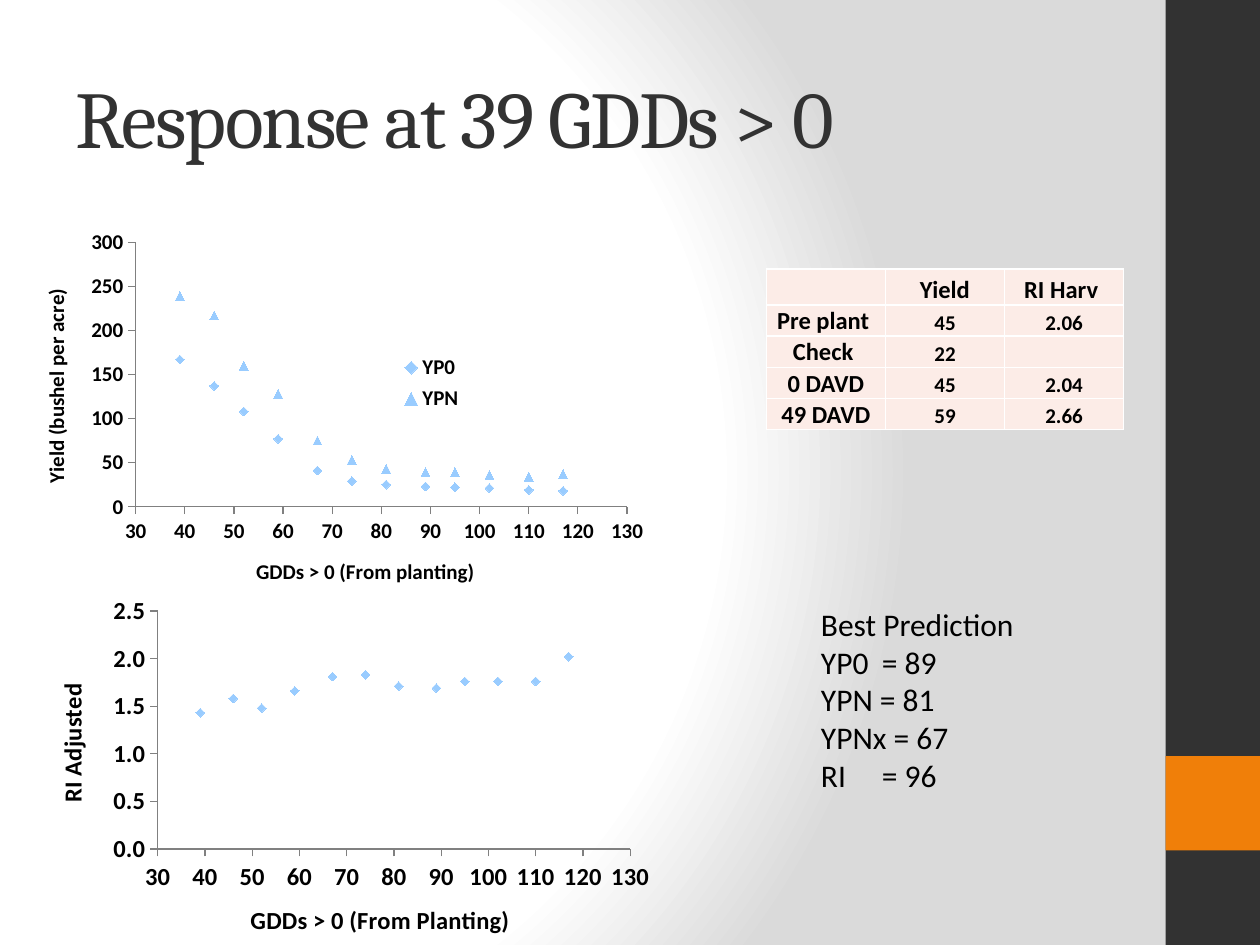
from lxml import etree
from pptx import Presentation
from pptx.chart.data import XyChartData
from pptx.dml.color import RGBColor
from pptx.enum.chart import XL_CHART_TYPE, XL_LEGEND_POSITION, XL_MARKER_STYLE, XL_TICK_MARK
from pptx.enum.shapes import MSO_SHAPE
from pptx.enum.text import MSO_ANCHOR, PP_ALIGN
from pptx.oxml import parse_xml
from pptx.oxml.ns import nsdecls, qn
from pptx.util import Cm, Pt

SCATTER = XL_CHART_TYPE.XY_SCATTER
LEGEND_RIGHT = XL_LEGEND_POSITION.RIGHT
DIAMOND, TRIANGLE = XL_MARKER_STYLE.DIAMOND, XL_MARKER_STYLE.TRIANGLE
TICK_OUT = XL_TICK_MARK.OUTSIDE
RECTANGLE = MSO_SHAPE.RECTANGLE
MIDDLE, BOTTOM = MSO_ANCHOR.MIDDLE, MSO_ANCHOR.BOTTOM
CENTER = PP_ALIGN.CENTER

BLACK = RGBColor(0x00, 0x00, 0x00)
WHITE = RGBColor(0xFF, 0xFF, 0xFF)
SILVER = RGBColor(0xDA, 0xDA, 0xDA)
CHARCOAL = RGBColor(0x32, 0x32, 0x32)
ORANGE = RGBColor(0xF0, 0x7F, 0x09)
PINK = RGBColor(0xFC, 0xEC, 0xE7)
SKY = RGBColor(0x99, 0xCC, 0xFF)
GRAY = RGBColor(0x80, 0x80, 0x80)

GDDS = [39, 46, 52, 59, 67, 74, 81, 89, 95, 102, 110, 117]
YIELDS = {
    "YP0": [167, 137, 108, 77, 41, 29, 25, 23, 22, 21, 19, 18],
    "YPN": [239, 217, 160, 128, 75, 53, 43, 39, 39, 36, 34, 37],
}
RI_ADJUSTED = {
    "Series 1": [1.43, 1.58, 1.48, 1.66, 1.81, 1.83, 1.71, 1.69, 1.76, 1.76, 1.76, 2.02],
}
HARVEST = [
    ["", "Yield", "RI Harv "],
    ["Pre plant ", "45", "2.06"],
    ["Check ", "22", ""],
    ["0 DAVD", "45", "2.04"],
    ["49 DAVD", "59", "2.66"],
]
PREDICTIONS = ["Best Prediction", "YP0\t= 89", "YPN = 81", "YPNx = 67", "RI\t= 96"]


def add_run(p, text, size, color=BLACK, font="Calibri", bold=False):
    """Add one formatted run to a paragraph."""
    r = p.add_run()
    r.text = text
    r.font.size, r.font.name, r.font.bold = Pt(size), font, bold
    r.font.color.rgb = color
    return r


def add_background(slide):
    """Fill the slide with a circular gradient."""
    fill = slide.background.fill
    fill.solid()
    fill.fore_color.rgb = WHITE
    stops = "".join(
        f'<a:gs pos="{pos * 1000}"><a:srgbClr val="{color}"/></a:gs>'
        for pos, color in ((0, WHITE), (75, WHITE), (100, SILVER))
    )
    solid = next(slide.background._cSld.iter(qn("a:solidFill")))
    solid.getparent().replace(solid, parse_xml(
        f'<a:gradFill {nsdecls("a")} rotWithShape="1"><a:gsLst>{stops}</a:gsLst>'
        '<a:path path="circle"><a:fillToRect l="20000" t="50000" r="100000" b="50000"/>'
        '</a:path></a:gradFill>'))


def add_sidebar(slide, x, y, w, h):
    """Draw the dark band with its orange block."""
    for top, height, color in ((y, h, CHARCOAL), (y + h * 0.8, h * 0.1, ORANGE)):
        sp = slide.shapes.add_shape(RECTANGLE, Cm(x), Cm(top), Cm(w), Cm(height))
        sp.shadow.inherit = False
        sp.fill.solid()
        sp.fill.fore_color.rgb = color
        sp.line.fill.background()


def add_title(slide, x, y, w, h):
    """Write the slide heading."""
    tf = slide.shapes.add_textbox(Cm(x), Cm(y), Cm(w), Cm(h)).text_frame
    tf.word_wrap = True
    tf.vertical_anchor = MIDDLE
    r = add_run(tf.paragraphs[0], "Response at 39 GDDs > 0", 46, CHARCOAL, "Cambria")
    r.font._element.set("spc", "-100")


def add_harvest_table(slide, x, y, w, h):
    """Tabulate yield and response index by treatment."""
    rows, cols = len(HARVEST), len(HARVEST[0])
    table = slide.shapes.add_table(rows, cols, Cm(x), Cm(y), Cm(w), Cm(h)).table
    head = 0.73
    for i, row in enumerate(HARVEST):
        table.rows[i].height = Cm((h - head) / (rows - 1) if i else head)
        for j, text in enumerate(row):
            cell = table.cell(i, j)
            cell.margin_left = cell.margin_right = cell.margin_top = Cm(0.03)
            cell.margin_bottom = 0
            cell.vertical_anchor = BOTTOM
            p = cell.text_frame.paragraphs[0]
            p.alignment = CENTER
            if text:
                add_run(p, text, 12 if i and j else 14, bold=True)
            else:
                etree.SubElement(p._p, qn("a:endParaRPr")).set("sz", "1200")
            for side in ("lnL", "lnR", "lnT", "lnB"):
                cell._tc.get_or_add_tcPr().append(parse_xml(
                    f'<a:{side} {nsdecls("a")} w="12700"><a:solidFill>'
                    f'<a:srgbClr val="{WHITE}"/></a:solidFill></a:{side}>'))
            cell.fill.solid()
            cell.fill.fore_color.rgb = PINK


def set_layout(element, after, x, y, w=None, h=None):
    """Place a chart part by fractions of the chart box."""
    for old in element.findall(qn("c:layout")):
        element.remove(old)
    layout = parse_xml(f'<c:layout {nsdecls("c")}><c:manualLayout/></c:layout>')
    inner = [("layoutTarget", "inner")] if after is None else []
    modes = [("xMode", "edge"), ("yMode", "edge")]
    sizes = [("x", x), ("y", y)] + ([("w", w), ("h", h)] if w else [])
    for tag, value in inner + modes + sizes:
        etree.SubElement(layout[0], qn(f"c:{tag}")).set("val", str(value))
    index = 0 if after is None else element.index(element.find(qn(after))) + 1
    element.insert(index, layout)


def format_axis(axis, title, size, low, high, step, place):
    """Set an axis scale, its line and its title."""
    axis.minimum_scale, axis.maximum_scale, axis.major_unit = low, high, step
    axis.has_major_gridlines = False
    axis.major_tick_mark = TICK_OUT
    axis.format.line.color.rgb = GRAY
    axis.tick_labels.number_format = "0.0" if step < 1 else "0"
    axis.tick_labels.number_format_is_linked = False
    add_run(axis.axis_title.text_frame.paragraphs[0], title, size, bold=True)
    set_layout(axis.axis_title._element, "c:tx", *place)


def add_scatter(slide, x, y, w, h, series, size, x_axis, y_axis, plot, legend=None):
    """Plot series against growing degree days."""
    data = XyChartData()
    for name, values in series.items():
        points = data.add_series(name)
        for gdd, value in zip(GDDS, values):
            points.add_data_point(gdd, value)
    chart = slide.shapes.add_chart(SCATTER, Cm(x), Cm(y), Cm(w), Cm(h), data).chart
    chart.has_title = False
    chart.font.size, chart.font.name, chart.font.bold = Pt(size), "Calibri", True
    chart.font.color.rgb = BLACK
    chart.plots[0].vary_by_categories = False
    for s, style in zip(chart.plots[0].series, (DIAMOND, TRIANGLE)):
        s.smooth = False
        s.format.line.fill.background()
        s.marker.style, s.marker.size = style, 5
        s.marker.format.fill.solid()
        s.marker.format.fill.fore_color.rgb = SKY
        s.marker.format.line.fill.background()
    title, place = x_axis
    format_axis(chart.category_axis, title, size, 30, 130, 10, place)
    title, high, step, place = y_axis
    format_axis(chart.value_axis, title, size, 0, high, step, place)
    set_layout(chart._chartSpace.chart.plotArea, None, *plot)
    chart.has_legend = legend is not None
    if legend:
        chart.legend.position = LEGEND_RIGHT
        chart.legend.include_in_layout = False
        set_layout(chart.legend._element, "c:legendPos", *legend)


def add_predictions(slide, x, y, w, h):
    """List the best prediction for each measure."""
    tf = slide.shapes.add_textbox(Cm(x), Cm(y), Cm(w), Cm(h)).text_frame
    tf.word_wrap = False
    for i, text in enumerate(PREDICTIONS):
        p = tf.add_paragraph() if i else tf.paragraphs[0]
        add_run(p, text, 18)
        if "\t" in text:
            p._p.get_or_add_pPr().append(parse_xml(
                f'<a:tabLst {nsdecls("a")}><a:tab pos="{Cm(1.23)}" algn="l"/></a:tabLst>'))


def main():
    """Build and save the slide."""
    prs = Presentation()
    prs.slide_width, prs.slide_height = Cm(25.4), Cm(19.05)
    slide = prs.slides.add_slide(prs.slide_layouts[6])
    add_background(slide)
    add_sidebar(slide, 23.5, 0, 1.9, 19.05)
    add_title(slide, 1.27, 0.76, 21.16, 3.18)
    add_harvest_table(slide, 15.45, 5.42, 7.2, 3.24)
    add_scatter(slide, 0.64, 4.45, 12.7, 7.62, YIELDS, 12,
                ("GDDs > 0 (From planting) ", (0.35, 0.88)),
                ("Yield (bushel per acre)", 300, 50, (0.01, 0.17)),
                (0.165, 0.057, 0.78, 0.7), (0.57, 0.34, 0.13, 0.18))
    add_scatter(slide, 0.64, 11.86, 12.7, 7.62, RI_ADJUSTED, 14,
                ("GDDs > 0 (From Planting)", (0.34, 0.82)),
                ("RI Adjusted", 2.5, 0.5, (0.03, 0.24)),
                (0.2, 0.06, 0.75, 0.63))
    add_predictions(slide, 16.3, 12.07, 4.45, 4.11)
    prs.save("out.pptx")


if __name__ == "__main__":
    main()
